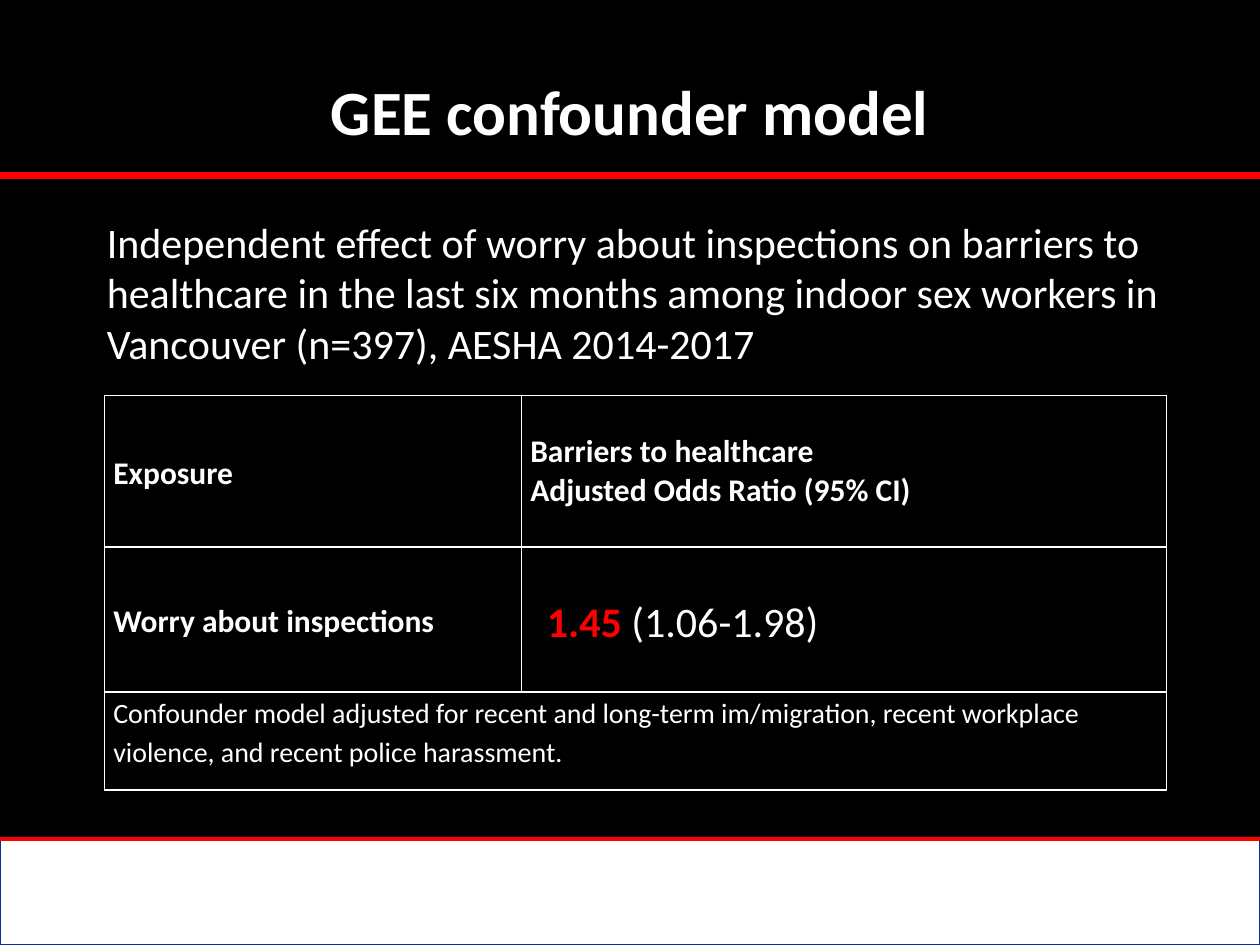
from dataclasses import dataclass

from lxml import etree
from pptx import Presentation
from pptx.dml.color import RGBColor
from pptx.enum.shapes import MSO_CONNECTOR, MSO_SHAPE
from pptx.enum.text import MSO_ANCHOR, PP_ALIGN
from pptx.oxml.ns import qn
from pptx.util import Inches, Pt

STRAIGHT = MSO_CONNECTOR.STRAIGHT
RECTANGLE = MSO_SHAPE.RECTANGLE
MIDDLE, TOP = MSO_ANCHOR.MIDDLE, MSO_ANCHOR.TOP
CENTER, LEFT = PP_ALIGN.CENTER, PP_ALIGN.LEFT


@dataclass(frozen=True)
class Theme:
    font: str = "Calibri"
    black: RGBColor = RGBColor(0, 0, 0)
    white: RGBColor = RGBColor(255, 255, 255)
    red: RGBColor = RGBColor(255, 0, 0)
    blue: RGBColor = RGBColor(0, 0x30, 0x99)
    title: int = 36
    body: int = 24
    label: int = 18
    note: int = 16


THEME = Theme()


def add_run(paragraph, text, size, bold=False, color=THEME.white):
    run = paragraph.add_run()
    run.text = text
    run.font.name = THEME.font
    run.font.size = Pt(size)
    run.font.bold = bold
    run.font.color.rgb = color


def add_borders(cell):
    properties = cell._tc.get_or_add_tcPr()
    for position, side in enumerate(("a:lnL", "a:lnR", "a:lnT", "a:lnB")):
        line = etree.Element(qn(side), w=str(Pt(1)))
        fill = etree.SubElement(line, qn("a:solidFill"))
        etree.SubElement(fill, qn("a:srgbClr"), val=str(THEME.white))
        properties.insert(position, line)


prs = Presentation()
prs.slide_width, prs.slide_height = Inches(10), Inches(7.5)
slide = prs.slides.add_slide(prs.slide_layouts[6])
slide.background.fill.solid()
slide.background.fill.fore_color.rgb = THEME.black

# Footer band and red rules
footer = slide.shapes.add_shape(
    RECTANGLE, Inches(0), Inches(6.66), Inches(10), Inches(0.84))
footer.shadow.inherit = False
footer.fill.solid()
footer.fill.fore_color.rgb = THEME.white
footer.line.color.rgb = THEME.blue
footer.line.width = Pt(0.75)

for y, width in ((1.39, 4), (6.66, 2.25)):
    rule = slide.shapes.add_connector(
        STRAIGHT, Inches(0), Inches(y), Inches(10), Inches(y))
    rule.line.color.rgb = THEME.red
    rule.line.width = Pt(width)
    etree.SubElement(rule._element.spPr, qn("a:effectLst"))

# Title and description
texts = (
    ("GEE confounder model", (0.5, 0.25, 9, 1.25),
     MIDDLE, CENTER, THEME.title, True),
    ("Independent effect of worry about inspections on barriers to healthcare "
     "in the last six months among indoor sex workers in Vancouver (n=397), "
     "AESHA 2014-2017", (0.75, 1.67, 8.66, 1.3),
     TOP, LEFT, THEME.body, False),
)
for text, box, anchor, alignment, size, bold in texts:
    frame = slide.shapes.add_textbox(*map(Inches, box)).text_frame
    frame.word_wrap = True
    frame.vertical_anchor = anchor
    frame.paragraphs[0].alignment = alignment
    add_run(frame.paragraphs[0], text, size, bold)

# Results table
column_widths = (3.31, 5.12)
row_heights = (1.2, 1.15, 0.78)
table = slide.shapes.add_table(
    len(row_heights), len(column_widths), Inches(0.83), Inches(3.14),
    Inches(sum(column_widths)), Inches(sum(row_heights))).table
table.first_row = table.horz_banding = False
for column, width in zip(table.columns, column_widths):
    column.width = Inches(width)
for row, height in zip(table.rows, row_heights):
    row.height = Inches(height)

for cell in table.iter_cells():
    cell.fill.background()
    cell.margin_left = cell.margin_right = Inches(0.07)
    cell.margin_top = cell.margin_bottom = Inches(0)
    cell.vertical_anchor = MIDDLE
    add_borders(cell)

exposure = table.cell(0, 0).text_frame.paragraphs[0]
exposure.line_spacing = 1.15
add_run(exposure, "Exposure", THEME.label, True)

outcome = table.cell(0, 1).text_frame
add_run(outcome.paragraphs[0], "Barriers to healthcare", THEME.label, True)
add_run(outcome.add_paragraph(), "Adjusted Odds Ratio (95% CI)",
        THEME.label, True)

worry = table.cell(1, 0).text_frame.paragraphs[0]
worry.line_spacing = 1.15
add_run(worry, "Worry about inspections", THEME.label, True)

odds_cell = table.cell(1, 1)
odds_cell.margin_left = Inches(0.2)
odds_ratio = odds_cell.text_frame.paragraphs[0]
odds_ratio.line_spacing = 1.15
add_run(odds_ratio, "1.45", THEME.body, True, THEME.red)
add_run(odds_ratio, " (1.06-1.98)", THEME.body)

note_cell = table.cell(2, 0)
note_cell.merge(table.cell(2, 1))
note_cell.vertical_anchor = TOP
note = note_cell.text_frame.paragraphs[0]
note.line_spacing = 1.15
add_run(note, "Confounder model adjusted for recent and long-term im/migration, "
        "recent workplace violence, and recent police harassment.", THEME.note)

prs.save("out.pptx")
